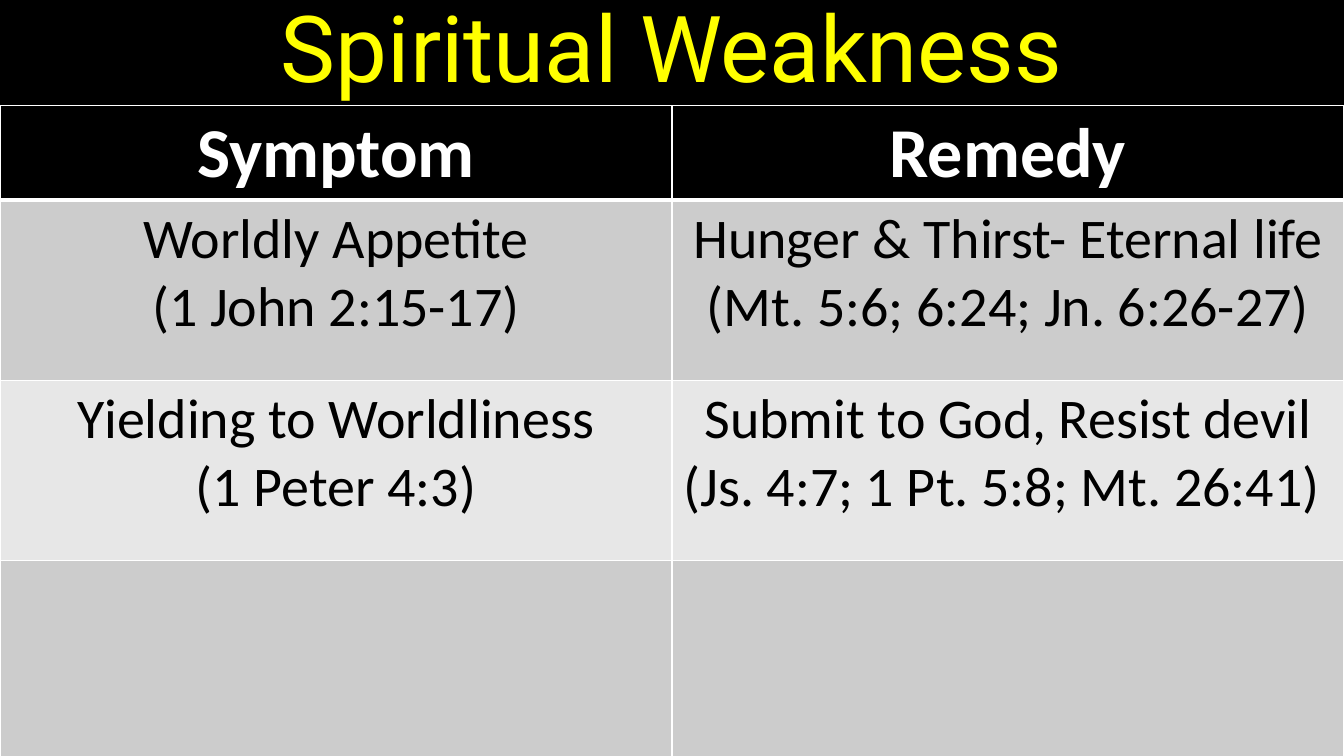
from lxml.etree import SubElement
from pptx import Presentation
from pptx.dml.color import RGBColor
from pptx.enum.text import MSO_ANCHOR, PP_ALIGN
from pptx.oxml.ns import qn
from pptx.util import Inches, Pt

BLACK = RGBColor(0x00, 0x00, 0x00)
WHITE = RGBColor(0xFF, 0xFF, 0xFF)
YELLOW = RGBColor(0xFF, 0xFF, 0x00)
DARK_BAND = RGBColor(0xCC, 0xCC, 0xCC)
LIGHT_BAND = RGBColor(0xE7, 0xE7, 0xE7)

SLIDE_WIDTH = Inches(13.33)
SLIDE_HEIGHT = Inches(7.5)
TITLE_HEIGHT = Inches(1.05)
ROW_HEIGHTS = [Inches(height) for height in (0.9, 1.79, 1.79, 2.13)]

ROWS = [
    (["Symptom"], ["Remedy"]),
    (["Worldly Appetite", "(1 John 2:15-17)"],
     ["Hunger & Thirst- Eternal life", "(Mt. 5:6; 6:24; Jn. 6:26-27)"]),
    (["Yielding to Worldliness", "(1 Peter 4:3)"],
     ["Submit to God, Resist devil", "(Js. 4:7; 1 Pt. 5:8; Mt. 26:41) "]),
    ([], []),
]


def write_lines(text_frame, lines, font_name, size, color, bold=False):
    for index, line in enumerate(lines):
        paragraph = text_frame.paragraphs[0] if index == 0 else text_frame.add_paragraph()
        paragraph.alignment = PP_ALIGN.CENTER
        run = paragraph.add_run()
        run.text = line
        run.font.name = font_name
        run.font.size = Pt(size)
        run.font.bold = bold
        run.font.color.rgb = color


def set_borders(cell, top, bottom):
    properties = cell._tc.get_or_add_tcPr()
    for side, width in (("L", 1), ("R", 1), ("T", top), ("B", bottom)):
        line = SubElement(properties, qn(f"a:ln{side}"), w=str(Pt(width)))
        fill = SubElement(line, qn("a:solidFill"))
        SubElement(fill, qn("a:srgbClr"), val=str(WHITE))


def add_title(slide, left, top, width, height):
    text_frame = slide.shapes.add_textbox(left, top, width, height).text_frame
    text_frame.word_wrap = True
    text_frame.vertical_anchor = MSO_ANCHOR.MIDDLE
    write_lines(text_frame, ["Spiritual Weakness"], "Roboto", 66, YELLOW)
    text_frame.paragraphs[0].line_spacing = 0.9


def add_remedy_table(slide, left, top, width):
    table = slide.shapes.add_table(
        len(ROWS), len(ROWS[0]), left, top, width, sum(ROW_HEIGHTS)).table
    for row_index, row in enumerate(ROWS):
        table.rows[row_index].height = ROW_HEIGHTS[row_index]
        is_header = row_index == 0
        band = DARK_BAND if row_index % 2 else LIGHT_BAND
        for column_index, lines in enumerate(row):
            cell = table.cell(row_index, column_index)
            set_borders(cell, 3 if row_index == 1 else 1, 3 if is_header else 1)
            cell.fill.solid()
            cell.fill.fore_color.rgb = BLACK if is_header else band
            write_lines(cell.text_frame, lines, "Calibri",
                        50 if is_header else 40,
                        WHITE if is_header else BLACK, is_header)


def main():
    presentation = Presentation()
    presentation.slide_width = SLIDE_WIDTH
    presentation.slide_height = SLIDE_HEIGHT
    slide = presentation.slides.add_slide(presentation.slide_layouts[6])
    slide.background.fill.solid()
    slide.background.fill.fore_color.rgb = BLACK
    add_title(slide, 0, 0, SLIDE_WIDTH, TITLE_HEIGHT)
    add_remedy_table(slide, 0, TITLE_HEIGHT, SLIDE_WIDTH)
    presentation.save("out.pptx")


if __name__ == "__main__":
    main()
